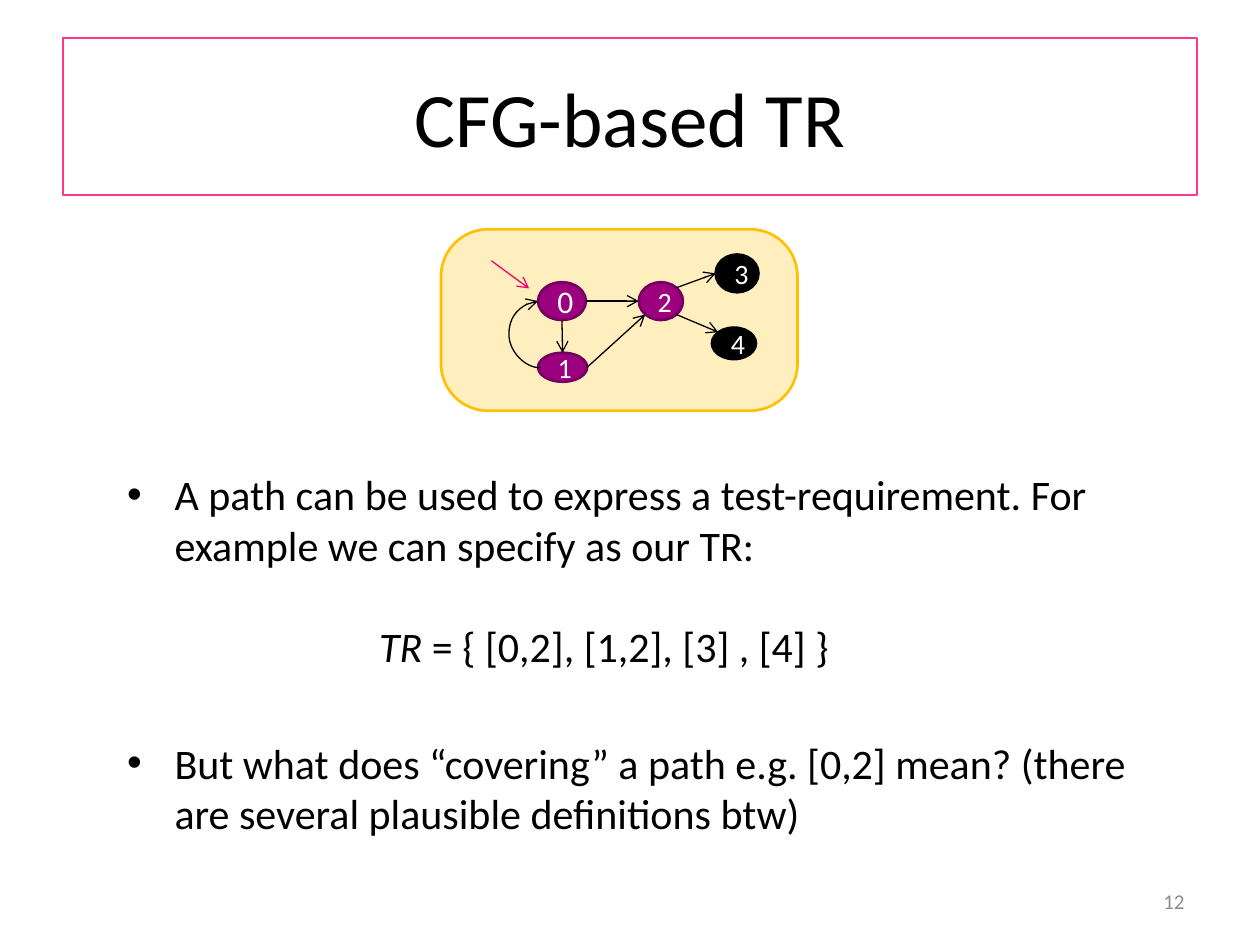
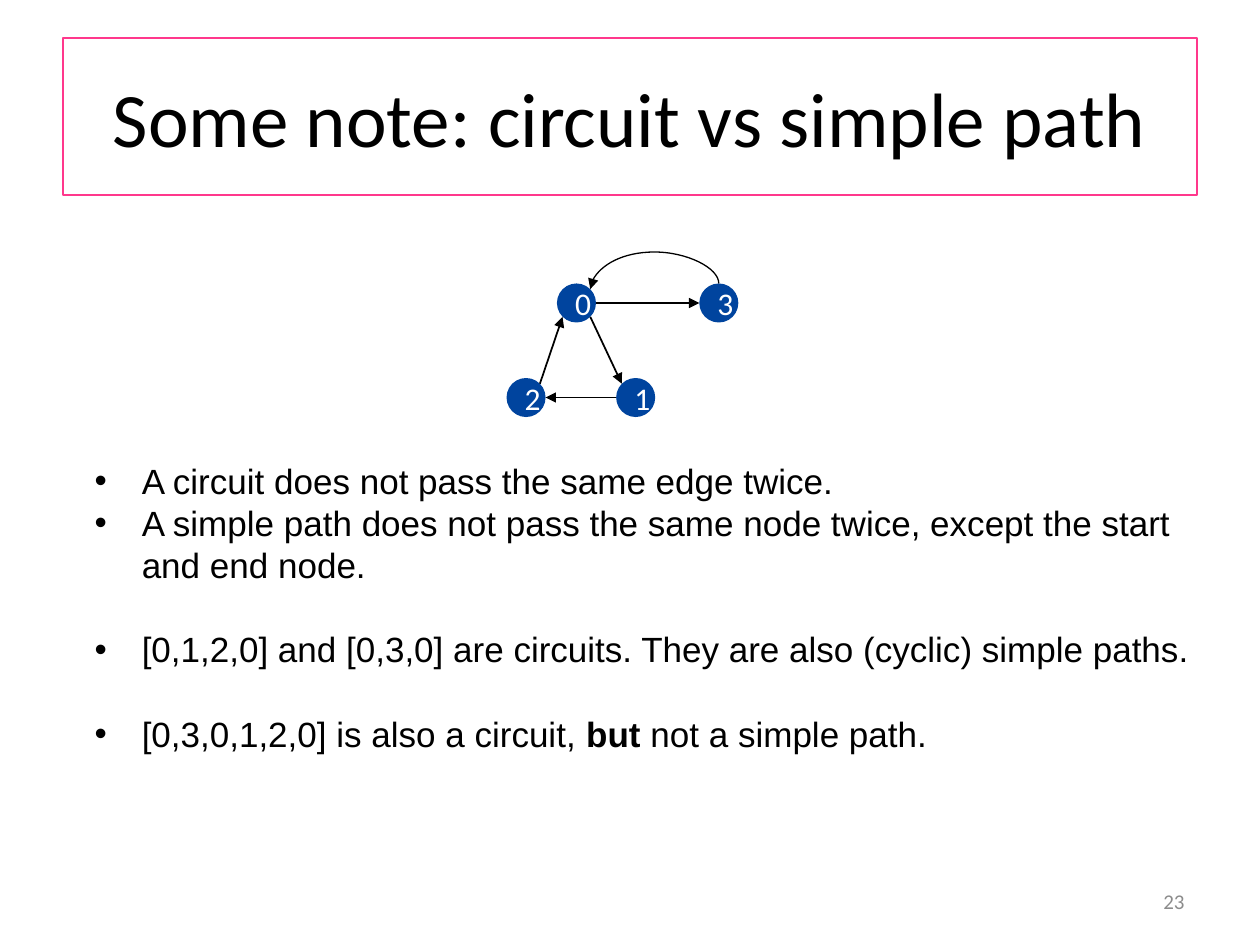
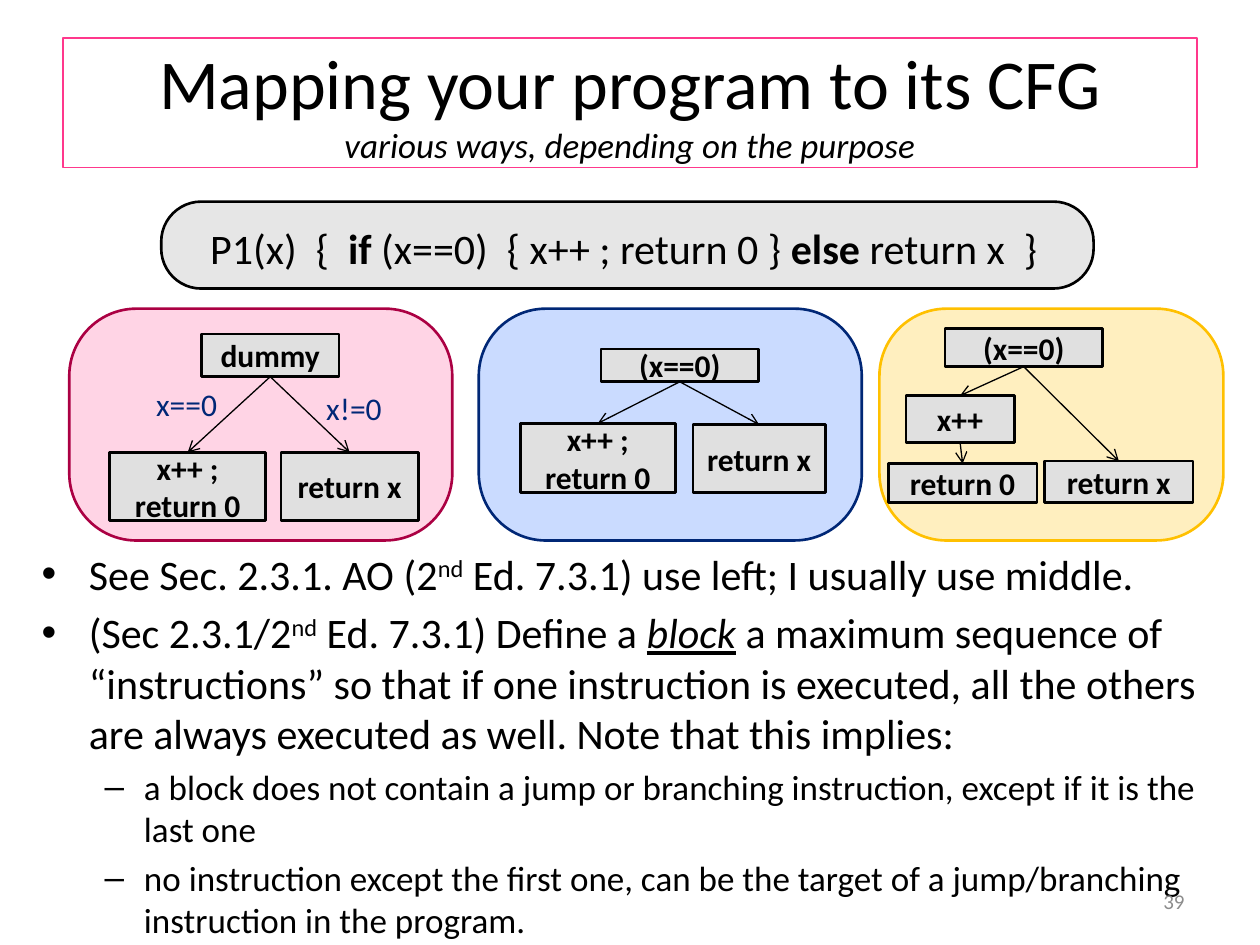
import dataclasses

import lxml.etree
import pptx
import pptx.dml.color
import pptx.enum.shapes
import pptx.enum.text
import pptx.oxml.ns
import pptx.util

SHAPE = pptx.enum.shapes.MSO_SHAPE
CONNECTOR = pptx.enum.shapes.MSO_CONNECTOR
ALIGN = pptx.enum.text.PP_ALIGN
ANCHOR = pptx.enum.text.MSO_ANCHOR
FIT = pptx.enum.text.MSO_AUTO_SIZE
Pt = pptx.util.Pt
qn = pptx.oxml.ns.qn

# The grid has 100 columns and 75 rows of square cells.
COLUMNS, ROWS = 100, 75
CELL = pptx.util.Inches(0.1)


@dataclasses.dataclass(frozen=True)
class Theme:
    font: str = "Calibri"
    note_font: str = "Arial"
    ink: str = "000000"
    paper: str = "FFFFFF"
    frame: str = "FF388C"
    number: str = "8C8C8C"
    entry: str = "F90069"
    purple: str = "9C007F"
    purple_edge: str = "73005E"
    blue: str = "00449E"
    navy: str = "002776"
    sky: str = "2C71FF"
    amber: str = "FFC000"
    pink: str = "FF5698"
    wine: str = "AB0043"
    silver: str = "9E9E9E"
    block: str = "E0E0E0"
    title_size: int = 44
    long_title_size: int = 40
    body_size: int = 24
    small_size: int = 20
    label_size: int = 18
    node_size: int = 16
    number_size: int = 12
    edge: float = 1.5
    thin: float = 0.75
    medium: float = 1


THEME = Theme()
COMPASS = {"n": (0, -1), "ne": (0.71, -0.71), "e": (1, 0), "se": (0.71, 0.71),
           "s": (0, 1), "sw": (-0.71, 0.71), "w": (-1, 0), "nw": (-0.71, -0.71)}
BOLD = {"bold": True}
ITALIC = {"italic": True}
RAISED = {"raised": True}


@dataclasses.dataclass(frozen=True)
class Box:
    """A place on the grid, in columns and rows."""
    left: float
    top: float
    width: float
    height: float

    def lengths(self):
        return [round(value * CELL) for value in dataclasses.astuple(self)]

    def side(self, name):
        """The point on the inscribed ellipse in a compass direction."""
        across, down = COMPASS[name]
        return (self.left + self.width * (1 + across) / 2,
                self.top + self.height * (1 + down) / 2)


def rgb(value):
    return pptx.dml.color.RGBColor.from_string(value)


def place(item, box):
    item.left, item.top, item.width, item.height = box.lengths()


def write(para, spans, **base):
    """Add (text, format) spans; a line feed in a text breaks the line."""
    for text, extra in spans:
        look = {"name": THEME.font, "color": THEME.ink, **base, **extra}
        for index, line in enumerate(text.split("\n")):
            if index:
                para.add_line_break()
            if not line:
                continue
            span = para.add_run()
            span.text = line
            for key, value in look.items():
                if key == "color":
                    span.font.color.rgb = rgb(value)
                elif key == "size":
                    span.font.size = Pt(value)
                elif key == "raised":
                    span._r.get_or_add_rPr().set("baseline", "30000")
                else:
                    setattr(span.font, key, value)


def add_panel(page, kind, box, fill, edge=None, corner=None, opacity=None):
    shape = page.shapes.add_shape(kind, *box.lengths())
    shape.shadow.inherit = False
    shape.fill.solid()
    shape.fill.fore_color.rgb = rgb(fill)
    if opacity:
        color = next(shape.element.spPr.iter(qn("a:srgbClr")))
        lxml.etree.SubElement(color, qn("a:alpha"), val=str(opacity * 1000))
    if corner:
        shape.adjustments[0] = corner
    if edge:
        shape.line.color.rgb = rgb(edge)
        shape.line.width = Pt(THEME.edge)
    else:
        shape.line.fill.background()
    return shape


def add_rounded(page, box, fill, edge, corner):
    add_panel(page, SHAPE.ROUNDED_RECTANGLE, box, fill, edge, corner, 25)


def add_node(page, box, label, fill, edge=None, size=THEME.label_size):
    node = add_panel(page, SHAPE.OVAL, box, fill, edge)
    para = node.text_frame.paragraphs[0]
    para.alignment = ALIGN.CENTER
    write(para, [(label, {})], size=size, color=THEME.paper)


def add_block(page, box, label):
    """A box of the flow graph, with one paragraph per code line."""
    frame = add_panel(page, SHAPE.RECTANGLE, box, THEME.block, THEME.ink).text_frame
    for index, line in enumerate(label.split("\n")):
        para = frame.add_paragraph() if index else frame.paragraphs[0]
        para.alignment = ALIGN.CENTER
        write(para, [(line, BOLD)], size=THEME.label_size)


def add_arrow(page, start, end, color=THEME.ink, width=THEME.thin, head="arrow",
              kind=CONNECTOR.STRAIGHT):
    ends = [round(value * CELL) for value in (*start, *end)]
    arrow = page.shapes.add_connector(kind, *ends)
    arrow.line.color.rgb = rgb(color)
    arrow.line.width = Pt(width)
    properties = arrow.element.spPr
    lxml.etree.SubElement(properties.get_or_add_ln(), qn("a:tailEnd"), type=head)
    lxml.etree.SubElement(properties, qn("a:effectLst"))
    return arrow


def add_curve(page, start, end, bulge, upward=False, head="arrow"):
    """Curve leftward that bulges left of the start, or above it if upward."""
    wide, high = start[0] - end[0], end[1] - start[1]
    reach = bulge / wide
    if upward:
        middle = (start[0] + end[0]) / 2, (start[1] + end[1]) / 2
        start = middle[0] + high / 2, middle[1] + wide / 2
        end = middle[0] - high / 2, middle[1] - wide / 2
        reach = -bulge / high
    curve = add_arrow(page, start, end, head=head, kind=CONNECTOR.CURVE)
    properties = curve.element.spPr
    if upward:
        properties.find(qn("a:xfrm")).set("rot", str(270 * 60000))
    guides = next(properties.iter(qn("a:avLst")))
    lxml.etree.SubElement(guides, qn("a:gd"), name="adj1",
                          fmla=f"val {round(reach * 100000)}")


def add_edges(page, boxes, edges, **look):
    for first, first_side, second, second_side in edges:
        add_arrow(page, boxes[first].side(first_side),
                  boxes[second].side(second_side), **look)


def add_label(page, box, spans, size, color=THEME.ink):
    label = page.shapes.add_textbox(*box.lengths()).text_frame
    label.word_wrap = False
    label.auto_size = FIT.SHAPE_TO_FIT_TEXT
    write(label.paragraphs[0], spans, size=size, color=color)


def add_page(deck, spans, number, size=THEME.title_size, title_height=12.5):
    page = deck.slides.add_slide(deck.slide_layouts[1])
    title = page.shapes.title
    place(title, Box(5, 3, 90, title_height))
    title.line.color.rgb = rgb(THEME.frame)
    title.line.width = Pt(THEME.medium)
    title.text_frame.auto_size = FIT.NONE
    title.text_frame.vertical_anchor = ANCHOR.MIDDLE
    write(title.text_frame.paragraphs[0], spans, size=size)

    footer = page.shapes.add_textbox(*Box(71.7, 69.5, 23.3, 4).lengths()).text_frame
    footer.word_wrap = True
    footer.vertical_anchor = ANCHOR.MIDDLE
    footer.paragraphs[0].alignment = ALIGN.RIGHT
    write(footer.paragraphs[0], [(str(number), {})],
          size=THEME.number_size, color=THEME.number)
    return page


def fill_list(page, box, items, **base):
    """Fill the body with (spans, settings) items; an indent drops the bullet."""
    body = page.placeholders[1]
    place(body, box)
    body.text_frame.auto_size = FIT.NONE
    for index, (spans, settings) in enumerate(items):
        para = body.text_frame.add_paragraph() if index else body.text_frame.paragraphs[0]
        para.level = settings.get("level", 0)
        if "before" in settings:
            para.space_before = Pt(settings["before"])
        if "indent" in settings:
            layout = para._p.get_or_add_pPr()
            layout.set("marL", str(settings["indent"] * CELL))
            layout.set("indent", "0")
            lxml.etree.SubElement(layout, qn("a:buNone"))
        size = THEME.small_size if para.level else THEME.body_size
        write(para, spans, **{"size": size, **base})


def build_requirement_page(deck):
    page = add_page(deck, [("CFG-based TR", {})], 12)
    add_rounded(page, Box(35, 18.2, 28.3, 14.4), THEME.amber, THEME.amber, 0.26)
    fill_list(page, Box(9.1, 36.7, 86.4, 30.8), [
        ([("A path can be used to express a test-requirement. For example we can "
           "specify as our TR:", {})], {}),
        ([("TR", ITALIC), (" = { [0,2], [1,2], [3] , [4] }", {})],
         {"indent": 20, "before": 29}),
        ([("But what does “covering” a path e.g. [0,2] mean? (there are several "
           "plausible definitions btw)", {})], {"before": 38}),
    ])
    nodes = {"0": Box(42.7, 22.4, 3.8, 3), "1": Box(42.7, 28, 3.9, 2.3),
             "2": Box(50.7, 22.4, 3.5, 3), "3": Box(56.8, 20.2, 3.4, 3),
             "4": Box(56.5, 26, 3.5, 2.5)}
    for label, box in nodes.items():
        final = label in "34"
        add_node(page, box, label, THEME.ink if final else THEME.purple,
                 THEME.ink if final else THEME.purple_edge,
                 THEME.label_size if label == "0" else THEME.node_size)
    add_edges(page, nodes, [("0", "e", "2", "w"), ("2", "se", "4", "nw"),
                            ("2", "ne", "3", "w"), ("0", "s", "1", "n"),
                            ("1", "e", "2", "sw")])
    add_arrow(page, (39, 20.7), (42, 22.9), THEME.entry)
    add_curve(page, (42.9, 29.2), nodes["0"].side("w"), 2.5)


def build_circuit_page(deck):
    page = add_page(deck, [("Some note: circuit vs simple path", {})], 23)
    nodes = {label: Box(left, top, 3.1, 3.1) for label, left, top in
             [("0", 44.2, 22.5), ("1", 48.9, 30), ("2", 40.2, 30), ("3", 55.5, 22.5)]}
    for label, box in nodes.items():
        add_node(page, box, label, THEME.blue)
    add_edges(page, nodes, [("0", "se", "1", "nw"), ("1", "w", "2", "e"),
                            ("2", "ne", "0", "sw"), ("0", "e", "3", "w")],
              width=THEME.medium, head="triangle")
    add_curve(page, nodes["3"].side("n"), nodes["0"].side("ne"), 2.5,
              upward=True, head="triangle")
    close, apart = {"before": 0}, {"before": 24}
    fill_list(page, Box(6.5, 36, 90, 24.6), [
        ([("A circuit does not pass the same edge twice.", {})], close),
        ([("A simple path does not pass the same node twice, except the start "
           "and end node.", {})], close),
        ([("[0,1,2,0] and [0,3,0] are circuits. They are also (cyclic) simple "
           "paths.", {})], apart),
        ([("[0,3,0,1,2,0] is also a circuit, ", {}), ("but", BOLD),
          (" not a simple path.", {})], apart),
    ], name=THEME.note_font, size=THEME.small_size)


def build_mapping_page(deck):
    page = add_page(deck, [
        ("Mapping your program to its CFG\n", {}),
        ("various ways, depending on the purpose",
         {"size": THEME.small_size, **ITALIC}),
    ], 39, THEME.long_title_size, 10.3)
    for left, width, fill, edge in [(5.5, 30.4, THEME.pink, THEME.wine),
                                    (38, 30.4, THEME.sky, THEME.navy),
                                    (69.8, 27.3, THEME.amber, THEME.amber)]:
        add_rounded(page, Box(left, 24.5, width, 18.4), fill, edge, 0.29)
    add_rounded(page, Box(12.8, 16, 74, 6.9), THEME.silver, THEME.ink, 0.46)
    add_label(page, Box(15.7, 17.2, 67.9, 5.1), [
        ("P1(x)  {  ", {}), ("if", BOLD), (" (x==0)  { x++ ; return 0 } ", {}),
        ("else", BOLD), (" return x  }", {})], THEME.body_size)

    fork = [("test", "s", "then", "n"), ("test", "s", "else", "n")]
    graphs = [
        ({"test": (Box(16, 26.5, 10.9, 3.4), "dummy"),
          "then": (Box(8.7, 35.9, 12.4, 5.4), "x++ ;\nreturn 0"),
          "else": (Box(22.3, 35.9, 10.9, 5.4), "return x")}, fork),
        ({"test": (Box(47.7, 27.7, 12.5, 2.6), "(x==0)"),
          "then": (Box(41.3, 33.6, 12.3, 5.5), "x++ ;\nreturn 0"),
          "else": (Box(55, 33.7, 10.5, 5.4), "return x")}, fork),
        ({"test": (Box(75, 26.1, 12.5, 3), "(x==0)"),
          "then": (Box(71.9, 31.4, 8.6, 3.7), "x++"),
          "else": (Box(82.9, 36.6, 11.8, 3.3), "return x"),
          "exit": (Box(70.5, 36.8, 11.8, 3.1), "return 0")},
         fork + [("then", "s", "exit", "n")]),
    ]
    for blocks, edges in graphs:
        for box, label in blocks.values():
            add_block(page, box, label)
        add_edges(page, {name: box for name, (box, _) in blocks.items()}, edges)
    for box, condition in [(Box(11.4, 30.1, 6.9, 4), "x==0"),
                           (Box(24.9, 30.4, 6.5, 4), "x!=0")]:
        add_label(page, box, [(condition, {})], THEME.label_size, THEME.navy)

    fill_list(page, Box(2.3, 43, 94.5, 25.8), [
        ([("See Sec. 2.3.1. AO (2", {}), ("nd", RAISED),
          (" Ed. 7.3.1) use left; I usually use middle.", {})], {}),
        ([("(Sec 2.3.1/2", {}), ("nd", RAISED), (" Ed. 7.3.1) Define a ", {}),
          ("block", {"italic": True, "underline": True}),
          (" a maximum sequence of “instructions” so that if one instruction is "
           "executed, all the others are always executed as well. Note that this "
           "implies:", {})], {}),
        ([("a block does not contain a jump or branching instruction, except if "
           "it is the last one", {})], {"level": 1}),
        ([("no instruction except the first one, can be the target of a "
           "jump/branching instruction in the program.", {})], {"level": 1}),
    ])


def main():
    deck = pptx.Presentation()
    deck.slide_width, deck.slide_height = COLUMNS * CELL, ROWS * CELL
    build_requirement_page(deck)
    build_circuit_page(deck)
    build_mapping_page(deck)
    deck.save("out.pptx")


if __name__ == "__main__":
    main()
